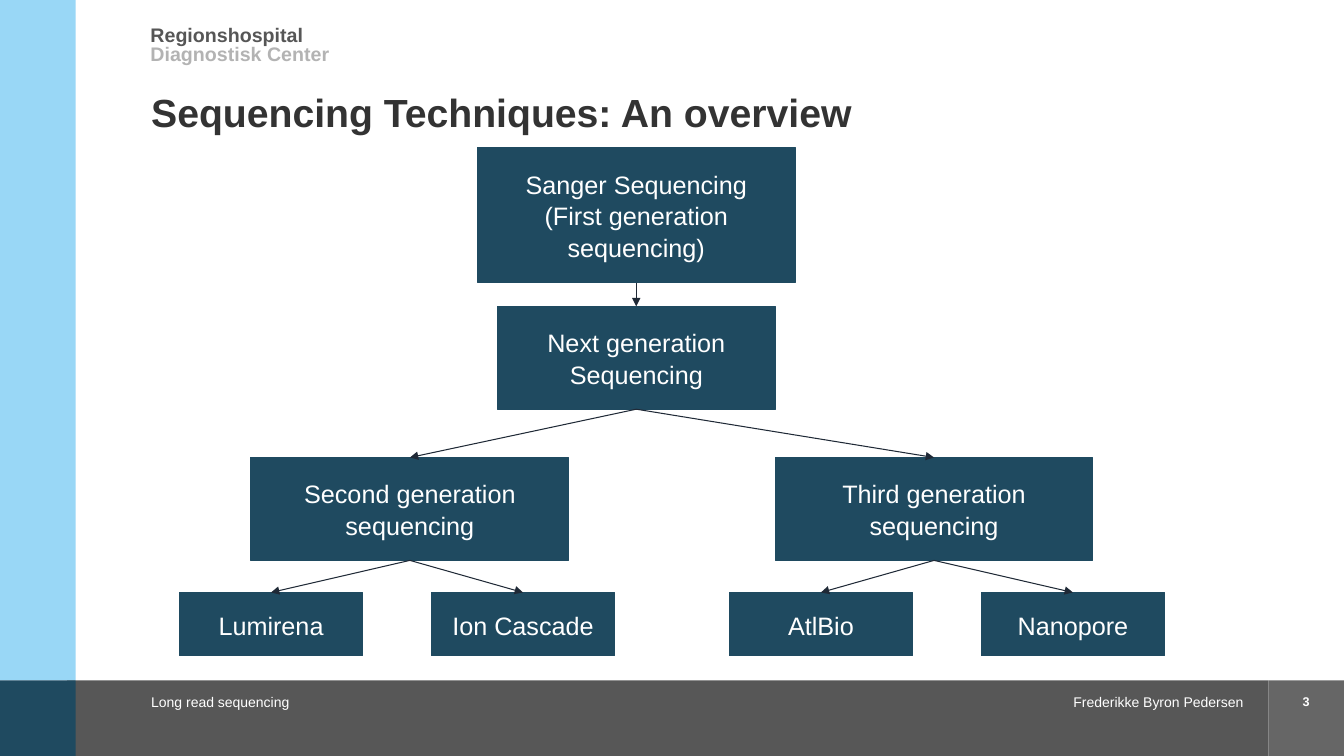
from dataclasses import dataclass

from lxml.etree import SubElement
from pptx import Presentation
from pptx.dml.color import RGBColor
from pptx.enum.shapes import MSO_CONNECTOR as Connector, MSO_SHAPE as Preset
from pptx.enum.text import MSO_ANCHOR as Anchor, MSO_AUTO_SIZE as AutoSize, PP_ALIGN as Align
from pptx.oxml.ns import qn
from pptx.shapes.autoshape import Shape
from pptx.slide import Slide
from pptx.util import Pt


@dataclass(frozen=True)
class Theme:
    font: str = "Arial"
    white: str = "FFFFFF"
    navy: str = "1F4A60"
    sky: str = "99D7F6"
    footer: str = "575757"
    number_panel: str = "666666"
    arrow: str = "1F2936"
    title: str = "333333"
    hospital: str = "565656"
    department: str = "B3B3B3"
    title_size: float = 28
    node_size: float = 18
    header_size: float = 14
    footer_size: float = 10
    number_size: float = 9
    line_width: float = 0.75


@dataclass(frozen=True)
class Area:
    left: float
    top: float
    width: float
    height: float

    def lengths(self) -> tuple[Pt, Pt, Pt, Pt]:
        return Pt(self.left), Pt(self.top), Pt(self.width), Pt(self.height)


@dataclass(frozen=True)
class Panel:
    area: Area
    color: str


@dataclass(frozen=True)
class Label:
    text: str
    area: Area
    size: float
    color: str
    bold: bool = False
    align: Align = Align.LEFT
    space_after: float = 0


@dataclass(frozen=True)
class Node:
    text: str
    area: Area
    parent: str = ""


THEME = Theme()
SLIDE_WIDTH, SLIDE_HEIGHT = 960, 540
BAR = 54
FOOTER_TOP = SLIDE_HEIGHT - BAR
NUMBER_LEFT = SLIDE_WIDTH - BAR
MARGIN = 108
FOOTER_TEXT_TOP, FOOTER_TEXT_HEIGHT = 495.4, 14.4
TITLE_AREA = Area(MARGIN, 31, 798.5, 65.5)

PANELS = [
    Panel(Area(48, FOOTER_TOP, NUMBER_LEFT - 48, BAR), THEME.footer),
    Panel(Area(NUMBER_LEFT, FOOTER_TOP, BAR, BAR), THEME.number_panel),
    Panel(Area(0, 0, BAR, FOOTER_TOP), THEME.sky),
    Panel(Area(0, FOOTER_TOP, BAR, BAR), THEME.navy),
]

LABELS = [
    Label("Regionshospital", Area(107.5, 16.6, 482, 17.3), THEME.header_size, THEME.hospital, True),
    Label("Diagnostisk Center", Area(107.5, 29.9, 482, 33), THEME.header_size,
          THEME.department, True, space_after=12),
    Label("Long read sequencing", Area(MARGIN, FOOTER_TEXT_TOP, 297.5, FOOTER_TEXT_HEIGHT),
          THEME.footer_size, THEME.white),
    Label("Frederikke Byron Pedersen", Area(621.5, FOOTER_TEXT_TOP, 266.5, FOOTER_TEXT_HEIGHT),
          THEME.footer_size, THEME.white, align=Align.RIGHT),
    Label("3", Area(NUMBER_LEFT, FOOTER_TEXT_TOP, BAR, FOOTER_TEXT_HEIGHT),
          THEME.number_size, THEME.white, True, Align.CENTER),
]


def centred(middle: float, top: float, width: float, height: float) -> Area:
    return Area(middle - width / 2, top, width, height)


def generation(middle: float) -> Area:
    return centred(middle, 326.8, 227, 73.5)


def platform(middle: float) -> Area:
    return centred(middle, 423.2, 131, 45.3)


TRUNK = 454.5
NODES = {
    "sanger": Node("Sanger Sequencing\n(First generation sequencing)",
                   centred(TRUNK, 105.5, 227, 96.3)),
    "next": Node("Next generation Sequencing", centred(TRUNK, 218.8, 198.8, 73.5), "sanger"),
    "second": Node("Second generation sequencing", generation(292.8), "next"),
    "third": Node("Third generation sequencing", generation(667.2), "next"),
    "lumirena": Node("Lumirena", platform(193.6), "second"),
    "cascade": Node("Ion Cascade", platform(373.6), "second"),
    "atlbio": Node("AtlBio", platform(586.4), "third"),
    "nanopore": Node("Nanopore", platform(766.4), "third"),
}


def write(shape: Shape, text: str, *, size: float, color: str, bold: bool = False,
          align: Align = Align.LEFT, anchor: Anchor = Anchor.TOP, inset: float = 0,
          line_spacing: float = 1.0, space_after: float = 0) -> None:
    frame = shape.text_frame
    frame.text = text
    frame.word_wrap = True
    frame.auto_size = AutoSize.NONE
    frame.vertical_anchor = anchor
    frame.margin_left = frame.margin_right = Pt(inset)
    frame.margin_top = frame.margin_bottom = Pt(0)
    for para in frame.paragraphs:
        para.alignment = align
        para.line_spacing = line_spacing
        para.space_after = Pt(space_after)
        for span in para.runs:
            span.font.name = THEME.font
            span.font.size = Pt(size)
            span.font.bold = bold
            span.font.color.rgb = RGBColor.from_string(color)


def draw_rectangle(page: Slide, area: Area, color: str, outlined: bool = False) -> Shape:
    box = page.shapes.add_shape(Preset.RECTANGLE, *area.lengths())
    box.shadow.inherit = False
    box.fill.solid()
    box.fill.fore_color.rgb = RGBColor.from_string(color)
    if outlined:
        box.line.color.rgb = RGBColor.from_string(color)
        box.line.width = Pt(THEME.line_width)
    else:
        box.line.fill.background()
    return box


def draw_label(page: Slide, label: Label) -> None:
    box = page.shapes.add_textbox(*label.area.lengths())
    write(box, label.text, size=label.size, color=label.color, bold=label.bold,
          align=label.align, space_after=label.space_after)


def draw_node(page: Slide, node: Node) -> Shape:
    box = draw_rectangle(page, node.area, THEME.navy, outlined=True)
    write(box, node.text, size=THEME.node_size, color=THEME.white, align=Align.CENTER,
          anchor=Anchor.MIDDLE, inset=2, line_spacing=1.05)
    return box


def draw_arrow(page: Slide, parent: Shape, child: Shape) -> None:
    arrow = page.shapes.add_connector(Connector.STRAIGHT, 0, 0, 0, 0)
    arrow.begin_connect(parent, 2)
    arrow.end_connect(child, 0)
    arrow.line.color.rgb = RGBColor.from_string(THEME.arrow)
    arrow.line.width = Pt(THEME.line_width)
    properties = arrow._element.spPr
    SubElement(properties.find(qn("a:ln")), qn("a:tailEnd"), type="triangle")
    SubElement(properties, qn("a:effectLst"))


def main() -> None:
    deck = Presentation()
    deck.slide_width, deck.slide_height = Pt(SLIDE_WIDTH), Pt(SLIDE_HEIGHT)
    page = deck.slides.add_slide(deck.slide_layouts.get_by_name("Title Only"))

    title = page.shapes.title
    title.left, title.top, title.width, title.height = TITLE_AREA.lengths()
    write(title, "Sequencing Techniques: An overview", size=THEME.title_size,
          color=THEME.title, bold=True, anchor=Anchor.BOTTOM, line_spacing=0.85)

    for panel in PANELS:
        draw_rectangle(page, panel.area, panel.color)
    for label in LABELS:
        draw_label(page, label)

    boxes = {name: draw_node(page, node) for name, node in NODES.items()}
    for name, node in NODES.items():
        if node.parent:
            draw_arrow(page, boxes[node.parent], boxes[name])

    deck.save("out.pptx")


if __name__ == "__main__":
    main()
